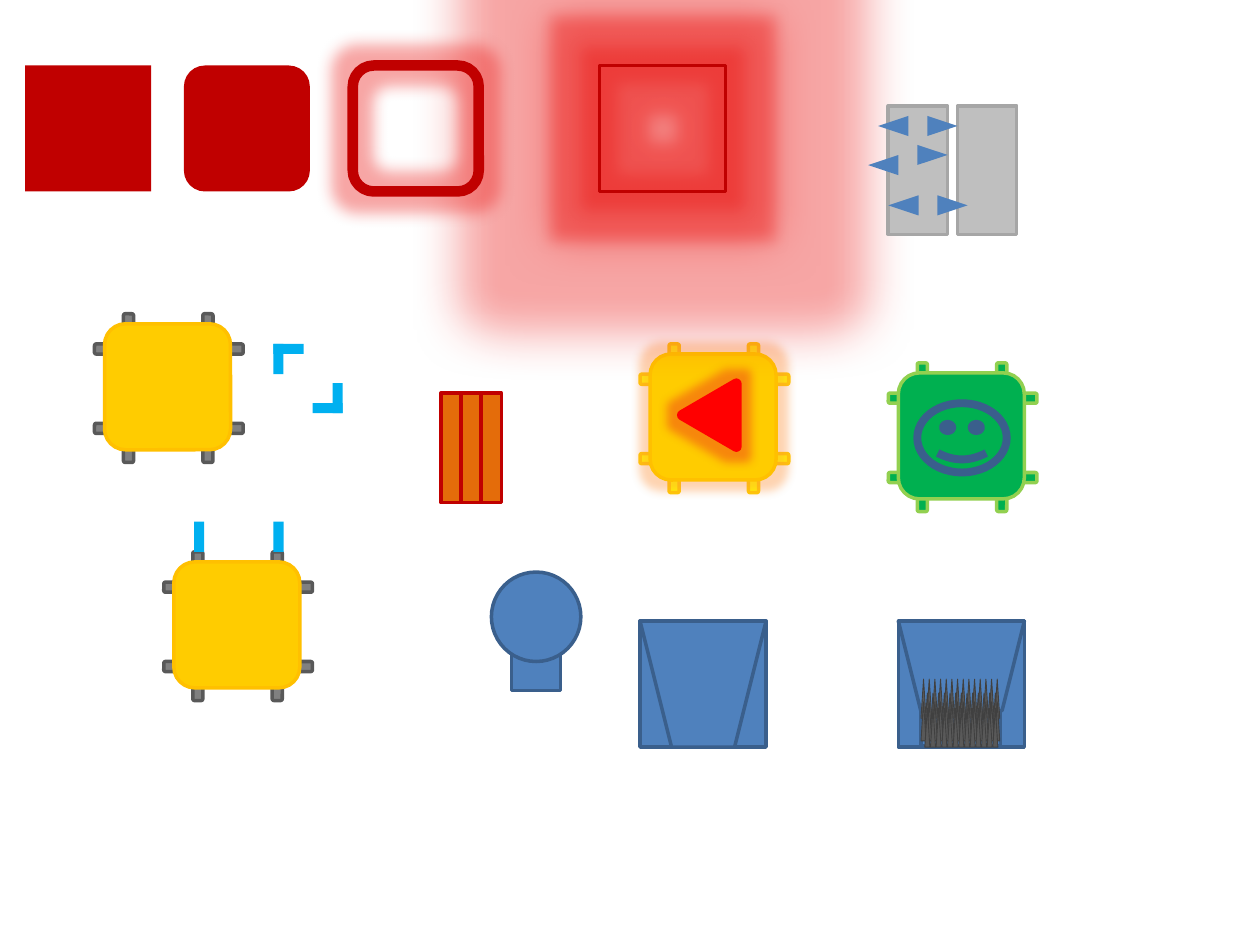
import pptx
import pptx.util
import pptx.dml.color
import pptx.enum.shapes
import pptx.oxml
import pptx.oxml.ns
from dataclasses import dataclass

Inches = pptx.util.Inches
Kind = pptx.enum.shapes.MSO_SHAPE


@dataclass(frozen=True)
class Theme:
    """Colours and line widths of the slide."""
    red: str = "C00000"
    hot: str = "FF0000"
    blue: str = "4F81BD"
    navy: str = "3A5F8C"
    sky: str = "00B0F0"
    gold: str = "FFCC00"
    amber: str = "FFC000"
    yellow: str = "FFFF00"
    rust: str = "E46C0A"
    grey: str = "808080"
    dark: str = "595959"
    black: str = "404040"
    pale: str = "BFBFBF"
    mid: str = "A6A6A6"
    green: str = "00B050"
    lime: str = "92D050"
    flare: str = "EC211E"
    peach: str = "FF943D"
    hair: float = 0.5
    thin: float = 2
    thick: float = 4.5
    bold: float = 6


T = Theme()


def draw(pool, kind, box, fill=None, line=None, width=T.thin, turn=0):
    """Add one preset shape in the given box."""
    shape = pool.add_shape(kind, *map(Inches, box))
    shape.shadow.inherit = False
    shape.rotation = turn
    if fill:
        shape.fill.solid()
        shape.fill.fore_color.rgb = pptx.dml.color.RGBColor.from_string(fill)
    else:
        shape.fill.background()
    if line:
        shape.line.color.rgb = pptx.dml.color.RGBColor.from_string(line)
        shape.line.width = pptx.util.Pt(width)
        shape.line._get_or_add_ln().append(pptx.oxml.parse_xml(
            f"<a:round {pptx.oxml.ns.nsdecls('a')}/>"))
    else:
        shape.line.fill.background()
    return shape


def glow(shape, color, size):
    """Give a shape a translucent glow, its size in points."""
    holder = shape._element.spPr.find(pptx.oxml.ns.qn("a:effectLst"))
    holder.append(pptx.oxml.parse_xml(
        f'<a:glow {pptx.oxml.ns.nsdecls("a")} rad="{pptx.util.Pt(size)}">'
        f'<a:srgbClr val="{color}"><a:alpha val="40000"/></a:srgbClr></a:glow>'))


def chip(pool, x, y, pin, edge, body, rim):
    """Draw a rounded tile with four pin bars behind it."""
    bars = ((-0.08, 0.16, 0), (-0.08, 0.79, 0), (0.23, 0.47, 90), (-0.4, 0.47, 90))
    for dx, dy, turn in bars:
        draw(pool, Kind.ROUNDED_RECTANGLE, (x + dx, y + dy, 1.18, 0.08),
             pin, edge, turn=turn)
    return draw(pool, Kind.ROUNDED_RECTANGLE, (x, y, 1, 1), body, rim)


def marks(pool, x, y):
    """Draw two facing corner marks."""
    for step, turn in ((0, 0), (0.39, 90)):
        for size in ((0.08, 0.24), (0.24, 0.08)):
            draw(pool, Kind.RECTANGLE, (x + step, y + step, *size), T.sky, turn=turn)


def rails(pool, x, y):
    """Draw two upright bars."""
    for dx in (0.63, 0):
        draw(pool, Kind.RECTANGLE, (x + dx, y, 0.24, 0.08), T.sky, turn=90)


def blocks(pool, x, y):
    """Draw the row of red squares, plain and glowing."""
    draw(pool, Kind.ROUNDED_RECTANGLE, (x + 1.26, y, 1, 1), T.red)
    draw(pool, Kind.RECTANGLE, (x, y, 1, 1), T.red)
    for size in (54, 18):
        frame = draw(pool, Kind.RECTANGLE, (x + 4.56, y, 1, 1), line=T.red)
        glow(frame, T.flare, size)
    ring = draw(pool, Kind.ROUNDED_RECTANGLE, (x + 2.6, y, 1, 1),
                line=T.red, width=T.bold)
    glow(ring, T.flare, 18)


def knob(pool, x, y):
    """Draw a round head on a square foot."""
    draw(pool, Kind.RECTANGLE, (x + 0.16, y + 0.55, 0.39, 0.39), T.blue, T.navy)
    draw(pool, Kind.OVAL, (x, y, 0.71, 0.71), T.blue, T.navy)


def slats(pool, x, y):
    """Draw three upright slats side by side."""
    for i in range(3):
        draw(pool, Kind.RECTANGLE, (x + 0.16 * i, y, 0.16, 0.87), T.rust, T.red)


def bin(pool, x, y, depth):
    """Draw a square holding a funnel of the given depth."""
    draw(pool, Kind.RECTANGLE, (x, y, 1, 1), T.blue, T.navy)
    draw(pool, Kind.TRAPEZOID, (x, y, 1, depth), T.blue, T.navy, turn=180)


def brush(pool, x, y):
    """Draw a base with four rows of spikes."""
    draw(pool, Kind.RECTANGLE, (x, y + 0.25, 0.63, 0.28), T.blue, T.navy)
    for i, dy in enumerate((0, 0.11, 0.18, 0.23)):
        row = pool.add_group_shape().shapes
        for j in range(14 - i % 2):
            left = x + 0.03 * (i % 2) + 0.045 * j
            draw(row, Kind.ISOSCELES_TRIANGLE, (left, y + dy, 0.04, 0.31),
                 T.dark, T.black, T.hair)


def doors(pool, x, y):
    """Draw two panels with arrowheads pointing both ways."""
    for dx in (0, 0.55):
        draw(pool, Kind.RECTANGLE, (x + dx, y, 0.47, 1.02), T.pale, T.mid)
    heads = ((0.35, 0.04, 90), (0.27, 0.27, 90), (0.43, 0.67, 90),
             (0.04, 0.67, 270), (-0.12, 0.35, 270), (-0.04, 0.04, 270))
    for dx, dy, turn in heads:
        draw(pool, Kind.ISOSCELES_TRIANGLE, (x + dx, y + dy, 0.16, 0.24),
             T.blue, turn=turn)


def smile(pool, x, y):
    """Draw the green tile with a smiling face."""
    chip(pool, x, y, T.green, T.lime, T.green, T.lime)
    draw(pool, Kind.SMILEY_FACE, (x + 0.15, y + 0.24, 0.71, 0.55),
         line=T.navy, width=T.thick)


def main():
    """Build and save the slide."""
    deck = pptx.Presentation()
    deck.slide_width, deck.slide_height = Inches(10), Inches(7.5)
    pool = deck.slides.add_slide(deck.slide_layouts[6]).shapes
    lit = chip(pool.add_group_shape().shapes, 5.16, 2.81,
               T.yellow, T.gold, T.gold, T.amber)
    glow(lit, T.peach, 11)
    chip(pool.add_group_shape().shapes, 0.83, 2.57, T.grey, T.dark, T.gold, T.amber)
    marks(pool, 2.17, 2.73)
    chip(pool, 1.38, 4.46, T.grey, T.dark, T.gold, T.amber)
    rails(pool.add_group_shape().shapes, 1.46, 4.22)
    blocks(pool, 0.2, 0.52)
    knob(pool, 3.9, 4.54)
    slats(pool, 3.5, 3.12)
    bin(pool, 5.08, 4.93, 1)
    bin(pool, 7.13, 4.93, 0.71)
    brush(pool, 7.31, 5.39)
    doors(pool, 7.05, 0.84)
    smile(pool.add_group_shape().shapes, 7.13, 2.96)
    arrow = draw(pool, Kind.ISOSCELES_TRIANGLE, (5.38, 3.08, 0.5, 0.43),
                 T.hot, T.hot, T.bold, 270)
    glow(arrow, T.flare, 11)
    deck.save("out.pptx")


if __name__ == "__main__":
    main()
